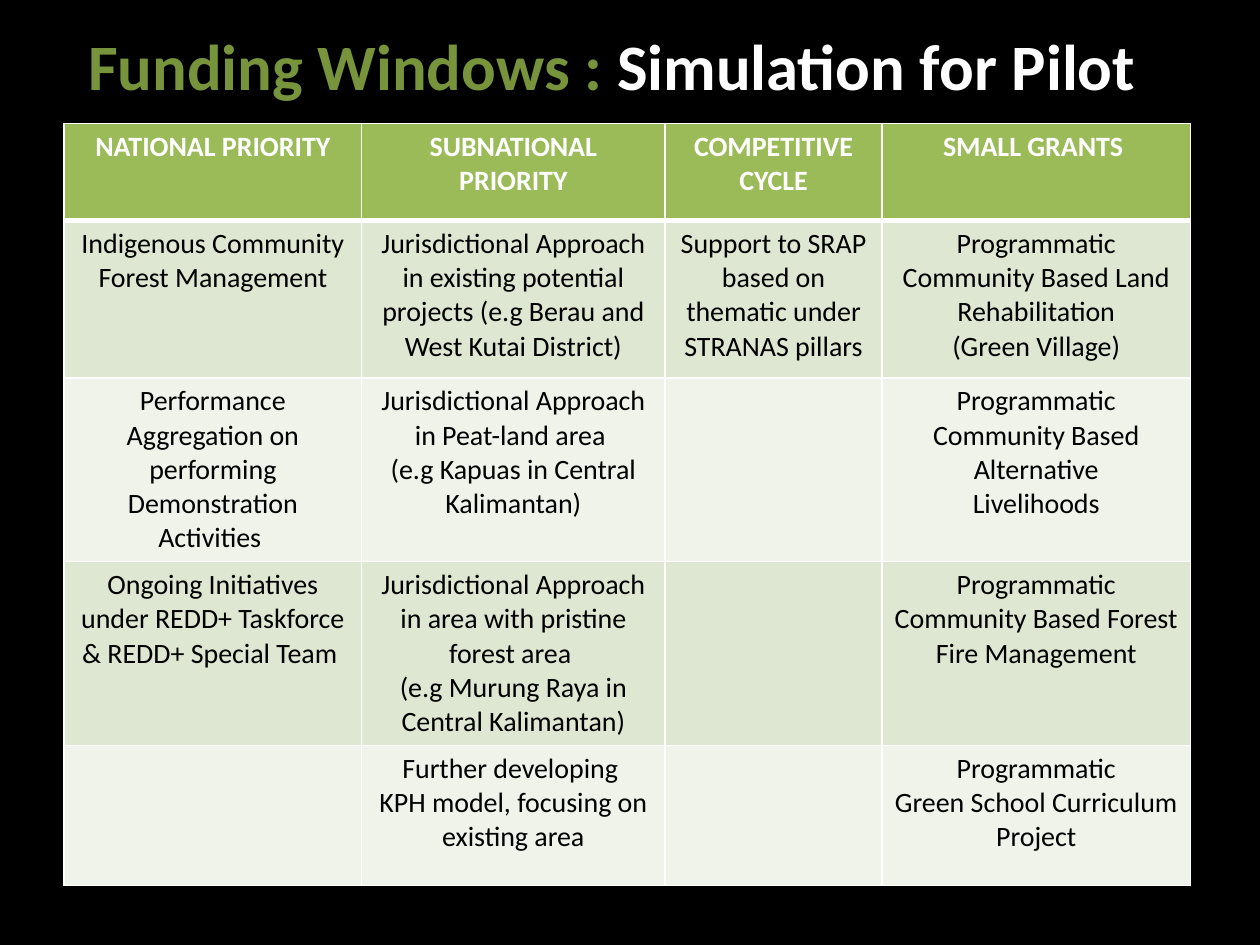
from lxml import etree
from pptx import Presentation
from pptx.dml.color import RGBColor
from pptx.enum import text
from pptx.oxml import ns
from pptx.util import Inches, Pt

WHITE = RGBColor(0xFF, 0xFF, 0xFF)
BLACK = RGBColor(0, 0, 0)
OLIVE = RGBColor(0x77, 0x93, 0x3C)
GREEN = RGBColor(0x9B, 0xBB, 0x59)
BANDS = [RGBColor(0xEF, 0xF3, 0xEA), RGBColor(0xDE, 0xE7, 0xD1)]

TITLE = [("Funding Windows : ", OLIVE), ("Simulation for Pilot", WHITE)]
HEADINGS = ["NATIONAL PRIORITY", "SUBNATIONAL PRIORITY", "COMPETITIVE CYCLE", "SMALL GRANTS "]
WINDOWS = [
    ["Indigenous Community Forest Management",
     "Jurisdictional Approach in existing potential projects (e.g Berau and West Kutai District)",
     "Support to SRAP based on thematic under STRANAS pillars",
     "Programmatic\nCommunity Based Land Rehabilitation\n(Green Village)"],
    ["Performance Aggregation on performing Demonstration Activities ",
     "Jurisdictional Approach in Peat-land area \n(e.g Kapuas in Central Kalimantan)",
     "",
     "Programmatic\nCommunity Based Alternative\nLivelihoods"],
    ["Ongoing Initiatives under REDD+ Taskforce & REDD+ Special Team ",
     "Jurisdictional Approach in area with pristine forest area \n(e.g Murung Raya in Central Kalimantan)",
     "",
     "Programmatic\nCommunity Based Forest Fire Management"],
    ["",
     "Further developing \nKPH model, focusing on existing area",
     "",
     "Programmatic\nGreen School Curriculum Project"],
]
COLUMN_WIDTHS = [2.36, 2.41, 1.72, 2.45]
ROW_HEIGHTS = [0.77, 1.25, 1.4, 1.25, 1.11]


def write(para, wording, size, color, bold=False):
    para.alignment = text.PP_ALIGN.CENTER
    span = para.add_run()
    span.text = wording
    span.font.name = "Calibri"
    span.font.size = Pt(size)
    span.font.bold = bold
    span.font.color.rgb = color


def set_borders(cell, **widths):
    properties = cell._tc.get_or_add_tcPr()
    for index, (side, width) in enumerate(widths.items()):
        line = etree.Element(ns.qn(f"a:ln{side}"), w=str(Pt(width)))
        fill = etree.SubElement(line, ns.qn("a:solidFill"))
        etree.SubElement(fill, ns.qn("a:srgbClr"), val=str(WHITE))
        properties.insert(index, line)


def add_title(page):
    box = page.shapes.add_textbox(Inches(0.25), Inches(0.16), Inches(9.21), Inches(0.71))
    frame = box.text_frame
    frame.word_wrap = True
    frame.vertical_anchor = text.MSO_ANCHOR.MIDDLE
    for wording, color in TITLE:
        write(frame.paragraphs[0], wording, 37, color, bold=True)


def add_windows_table(page):
    rows = [HEADINGS] + WINDOWS
    table = page.shapes.add_table(
        len(rows), len(HEADINGS), Inches(0.51), Inches(0.98),
        Inches(sum(COLUMN_WIDTHS)), Inches(sum(ROW_HEIGHTS))).table
    for column, width in zip(table.columns, COLUMN_WIDTHS):
        column.width = Inches(width)
    for row, height in zip(table.rows, ROW_HEIGHTS):
        row.height = Inches(height)
    for r, row in enumerate(rows):
        header = r == 0
        for c, wording in enumerate(row):
            cell = table.cell(r, c)
            cell.fill.solid()
            cell.fill.fore_color.rgb = GREEN if header else BANDS[r % 2]
            set_borders(cell, L=1, R=1, T=3 if r == 1 else 1, B=3 if header else 1)
            if not wording:
                continue
            frame = cell.text_frame
            for p, line in enumerate(wording.split("\n")):
                para = frame.add_paragraph() if p else frame.paragraphs[0]
                write(para, line, 16, WHITE if header else BLACK, bold=header)


def main():
    deck = Presentation()
    deck.slide_width, deck.slide_height = Inches(10), Inches(7.5)
    page = deck.slides.add_slide(deck.slide_layouts[6])
    page.background.fill.solid()
    page.background.fill.fore_color.rgb = BLACK
    add_windows_table(page)
    add_title(page)
    deck.save("out.pptx")


if __name__ == "__main__":
    main()
